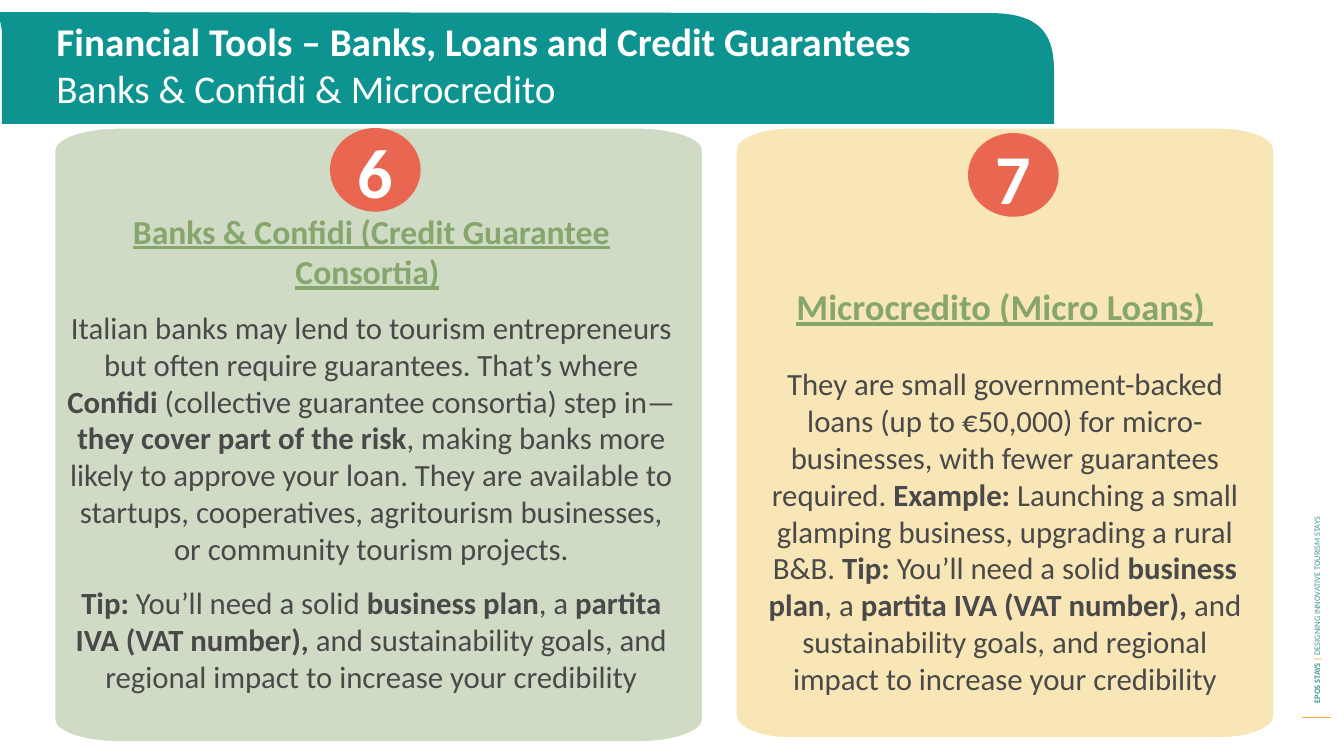
from lxml.etree import SubElement
from pptx import Presentation
from pptx.dml.color import RGBColor
from pptx.enum.shapes import MSO_CONNECTOR as Connector, MSO_SHAPE as Shape
from pptx.enum.text import MSO_ANCHOR as Anchor, MSO_AUTO_SIZE as AutoSize, PP_ALIGN as Align
from pptx.oxml.ns import qn
from pptx.util import Inches, Pt

# Content: text between ** marks is bold
TITLE = ["**Financial Tools – Banks, Loans and Credit Guarantees**",
         "Banks & Confidi & Microcredito"]
ADVICE = ("**Tip: **You’ll need a solid **business plan**, a **partita IVA (VAT number), **"
          "and sustainability goals, and regional impact to increase your credibility")
SIDE_LABEL = [("EPOS STAYS ", "side", True), ("| ", "accent", True),
              ("DESIGNING INNOVATIVE TOURISM STAYS", "side", False)]

# Places are (left, top, width, height) on a grid of 100 columns by 100 rows
CARDS = [
    dict(number="6", fill="sage", place=(4.08, 16.93, 48.2, 81.2),
         text_place=(4.07, 27.2, 47.11, 66), badge_at=(24.55, 16.93),
         heading="Banks & Confidi (Credit Guarantee Consortia)", tail=" ",
         heading_size=24, gap=12.2,
         body=["Italian banks may lend to tourism entrepreneurs but often require guarantees. "
               "That’s where **Confidi** (collective guarantee consortia) step in—"
               "**they cover part of the risk**, making banks more likely to approve your loan. "
               "They are available to startups, cooperatives, agritourism businesses, "
               "or community tourism projects.", ADVICE]),
    dict(number="7", fill="sand", place=(54.76, 16.93, 40.03, 80.67),
         text_place=(56.21, 36.93, 37.13, 56.53), badge_at=(72.02, 17.6),
         heading="Microcredito (Micro Loans) ", tail="",
         heading_size=26, gap=26.2,
         body=["They are small government-backed loans (up to €50,000) for micro-businesses, "
               "with fewer guarantees required. **Example: **Launching a small glamping "
               "business, upgrading a rural B&B. " + ADVICE]),
]
TITLE_PLACE = (3.45, 1.6, 70.07, 20.67)
SIDE_PLACE = (76.33, 54.53, 43.29, 2.67)
SIDE_RULE = (96.87, 94.93, 99.05, 94.93)
BADGE_SIZE = (6.75, 11.07)
CORNER = (0.1, 0.036)  # share of a card's width and height
PULL = 0.45            # distance of a curve's handles from the corner

# Outlines hold points; a list of three points is a curve
BAND = [(-0.15, 1.6), (73.67, 1.73), [(77.79, 1.73), (78.43, 5.2), (78.43, 9.6)],
        (78.43, 16.4), (0.15, 16.4), (0.15, 4.53), [(0.15, 3.87), (0.08, 3.33), (0, 2.67)]]


class Theme:
    font = "Calibri"
    colours = dict(teal="0D9390", sage="CFDBC5", sand="F9E6B6", coral="E96751", white="FFFFFF",
                   green="87A66E", ink="494949", side="459597", accent="FBA63B", rule="FBA63D")
    title, body, badge, side = 28, 22, 50, 6

    @classmethod
    def colour(cls, name):
        return RGBColor.from_string(cls.colours[name])


deck = Presentation()
deck.slide_width, deck.slide_height = Inches(13.33), Inches(7.5)
page = deck.slides.add_slide(deck.slide_layouts[5])


def across(columns):
    return round(deck.slide_width * columns / 100)


def down(rows):
    return round(deck.slide_height * rows / 100)


def measure(place):
    return [across(v) if i % 2 == 0 else down(v) for i, v in enumerate(place)]


def paint(shape, fill, outline=None):
    shape.shadow.inherit = False
    shape.fill.solid()
    shape.fill.fore_color.rgb = Theme.colour(fill)
    if outline:
        shape.line.color.rgb = Theme.colour(outline)
        shape.line.width = Pt(1)
    else:
        shape.line.fill.background()


def add_outline(parts, fill, outline=None):
    points, curve_starts = [], []
    for part in parts:
        if isinstance(part, list):
            curve_starts.append(len(points) - 1)
            points.extend(part)
        else:
            points.append(part)
    spots = [(across(x), down(y)) for x, y in points]
    builder = page.shapes.build_freeform(*spots[0])
    builder.add_line_segments(spots[1:])
    shape = builder.convert_to_shape()
    # Join the three segments of each curve into one Bezier
    segments = list(shape.element.iter(qn("a:lnTo")))
    for start in curve_starts:
        curve = segments[start]
        curve.tag = qn("a:cubicBezTo")
        for segment in segments[start + 1:start + 3]:
            curve.append(segment[0])
            segment.getparent().remove(segment)
    paint(shape, fill, outline)


def rounded(place):
    left, top, width, height = place
    right, bottom = left + width, top + height
    rx, ry = width * CORNER[0], height * CORNER[1]
    hx, hy = rx * PULL, ry * PULL
    return [(left, top + ry), [(left, top + hy), (left + hx, top), (left + rx, top)],
            (right - rx, top), [(right - hx, top), (right, top + hy), (right, top + ry)],
            (right, bottom - ry),
            [(right, bottom - hy), (right - hx, bottom), (right - rx, bottom)],
            (left + rx, bottom),
            [(left + hx, bottom), (left, bottom - hy), (left, bottom - ry)]]


def add_span(para, text, size, colour, **formats):
    span = para.add_run()
    span.text = text
    settings = dict(name=Theme.font, size=Pt(size), **formats)
    for name, value in settings.items():
        setattr(span.font, name, value)
    span.font.color.rgb = Theme.colour(colour)


def add_marked(para, text, size, colour):
    for index, part in enumerate(text.split("**")):
        if part:
            add_span(para, part, size, colour, bold=index % 2 == 1)


def set_frame(box, anchor=Anchor.TOP):
    frame = box.text_frame
    settings = dict(word_wrap=True, auto_size=AutoSize.NONE, vertical_anchor=anchor)
    for name, value in settings.items():
        setattr(frame, name, value)
    return frame


def add_text(place, anchor=Anchor.TOP):
    box = page.shapes.add_textbox(*measure(place))
    return box, set_frame(box, anchor)


# Side label and rule
rule = page.shapes.add_connector(Connector.STRAIGHT, *measure(SIDE_RULE))
rule.line.color.rgb = Theme.colour("rule")
rule.line.width = Pt(0.75)
SubElement(rule.element.spPr, qn("a:effectLst"))
side_box, side_frame = add_text(SIDE_PLACE, Anchor.MIDDLE)
side_box.rotation = 270
for text, colour, bold in SIDE_LABEL:
    add_span(side_frame.paragraphs[0], text, Theme.side, colour, bold=bold)

# Title band
add_outline(BAND, "teal")

# Cards with heading, body and numbered badge
for card in CARDS:
    add_outline(rounded(card["place"]), card["fill"], "white")
    _, frame = add_text(card["text_place"])
    para = frame.paragraphs[0]
    para.alignment = Align.CENTER
    add_span(para, card["heading"], card["heading_size"], "green", bold=True, underline=True)
    if card["tail"]:
        add_span(para, card["tail"], card["heading_size"], "ink", bold=True)
    for text in card["body"]:
        para = frame.add_paragraph()
        para.alignment = Align.CENTER
        para.space_before = Pt(card["gap"])
        add_marked(para, text, Theme.body, "ink")

    left, top = card["badge_at"]
    paint(page.shapes.add_shape(Shape.OVAL, *measure((left, top, *BADGE_SIZE))), "coral")
    _, frame = add_text((left + 0.13, top - 0.53, 6.45, 12.5))
    frame.paragraphs[0].alignment = Align.CENTER
    add_span(frame.paragraphs[0], card["number"], Theme.badge, "white", bold=True)

# Title, brought in front of the band
title = page.shapes.title
title.left, title.top, title.width, title.height = measure(TITLE_PLACE)
frame = set_frame(title)
for index, text in enumerate(TITLE):
    para = frame.add_paragraph() if index else frame.paragraphs[0]
    para.alignment = Align.LEFT
    add_marked(para, text, Theme.title, "white")
title.element.getparent().append(title.element)

deck.save("out.pptx")
